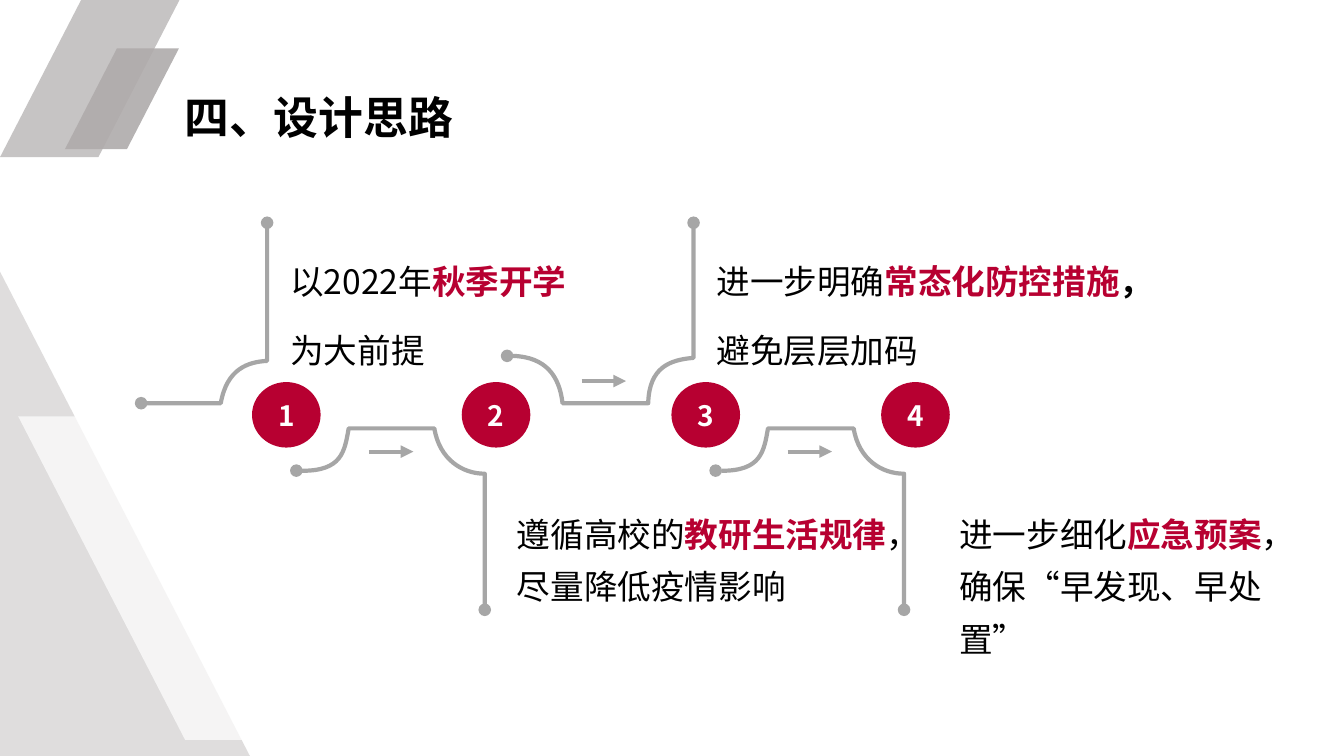
from dataclasses import dataclass

import lxml.etree
import pptx
import pptx.dml.color
import pptx.enum.lang
import pptx.enum.shapes
import pptx.enum.text
import pptx.oxml.ns
import pptx.util

Pt = pptx.util.Pt
qn = pptx.oxml.ns.qn
SHAPE = pptx.enum.shapes.MSO_SHAPE


@dataclass(frozen=True)
class Theme:
    font: str = "Noto Sans CJK SC"
    black: str = "000000"
    white: str = "FFFFFF"
    crimson: str = "B70031"
    track: str = "A6A6A6"
    stone: str = "AFABAB"
    title_size: int = 32
    body_size: int = 24
    number_size: int = 20
    line_spacing: float = 1.3
    track_width: int = 3


theme = Theme()
rgb = pptx.dml.color.RGBColor.from_string


def add_run(paragraph, text, size, color, bold):
    run = paragraph.add_run()
    run.text = text
    run.font.size = Pt(size)
    run.font.bold = bold
    run.font.color.rgb = rgb(color)
    run.font.name = theme.font
    run.font.language_id = pptx.enum.lang.MSO_LANGUAGE_ID.SIMPLIFIED_CHINESE
    east_asian = lxml.etree.SubElement(run.font._element, qn("a:ea"))
    east_asian.set("typeface", theme.font)


def style_track(track, **ends):
    track.line.color.rgb = rgb(theme.track)
    track.line.width = Pt(theme.track_width)
    for end, kind in ends.items():
        lxml.etree.SubElement(track.line._ln, qn("a:" + end)).set("type", kind)


deck = pptx.Presentation()
deck.slide_width, deck.slide_height = Pt(960), Pt(540)
slide = deck.slides.add_slide(deck.slide_layouts[6])
shapes = slide.shapes

# Slanted background bands: box, colour, opacity in percent, mirrored
bands = [
    ((-205.9, 193.7, 384.5, 346.3), theme.stone, 40, True),
    ((0, 0, 128.2, 112.3), theme.stone, 70, False),
    ((46.4, 34.6, 81.4, 72), theme.stone, 90, False),
    ((13, 297.4, 248.4, 231.1), theme.white, 70, True),
]
for box, color, opacity, mirrored in bands:
    band = shapes.add_shape(SHAPE.PARALLELOGRAM, *map(Pt, box))
    band.adjustments[0] = 0.516
    band.shadow.inherit = False
    band.line.fill.background()
    band.fill.solid()
    band.fill.fore_color.rgb = rgb(color)
    tint = band._element.spPr.find(".//" + qn("a:srgbClr"))
    lxml.etree.SubElement(tint, qn("a:alpha")).set("val", str(opacity * 1000))
    if mirrored:
        band._element.spPr.find(qn("a:xfrm")).set("flipH", "1")

# Tracks: a start point, then straight steps (one point) or curves (three points)
lower_track = [
    [(0, 30.2)],
    [(32.4, 31.7), (34.5, 16.6), (37.4, 0)],
    [(98.6, 0)],
    [(102.2, 22.3), (118.8, 32.4), (134.6, 32.4)],
    [(134.6, 129.6)],
]
tracks = [
    ((0, 0), [
        [(100.8, 288)],
        [(157.7, 288)],
        [(162, 263.5), (177.1, 258.5), (190.8, 257.8)],
        [(190.8, 159.1)],
    ]),
    ((211.7, 306), lower_track),
    ((0, 0), [
        [(362.2, 254.2)],
        [(388.8, 253.4), (399.6, 268.6), (401.8, 288)],
        [(463, 288)],
        [(463.7, 262.1), (478.8, 257), (495.4, 255.6)],
        [(495.4, 159.1)],
    ]),
    ((511.2, 306), lower_track),
]
for (left, top), steps in tracks:
    points = [(Pt(left + x), Pt(top + y)) for step in steps for x, y in step]
    builder = shapes.build_freeform(*points[0])
    builder.add_line_segments(points[1:], close=False)
    track = builder.convert_to_shape()
    track.shadow.inherit = False
    track.fill.background()
    style_track(track, headEnd="oval", tailEnd="oval")
    # Turn each three-point step into one Bezier segment
    segments = iter(list(track._element.spPr.find(".//" + qn("a:path"))))
    for step in steps:
        first, *others = [next(segments) for point in step]
        if others:
            first.tag = qn("a:cubicBezTo")
            for other in others:
                first.append(other[0])
                other.getparent().remove(other)

# Direction arrows between the steps
for left, top in [(263.5, 322.6), (415.4, 272.2), (562.6, 322.6)]:
    arrow = shapes.add_connector(
        pptx.enum.shapes.MSO_CONNECTOR.STRAIGHT, Pt(left), Pt(top), Pt(left + 31.7), Pt(top))
    style_track(arrow, tailEnd="triangle")
    lxml.etree.SubElement(arrow._element.spPr, qn("a:effectLst"))

# Numbered circles
for index in range(4):
    circle = shapes.add_shape(
        SHAPE.OVAL, Pt(180 + 149.8 * index), Pt(272.9), Pt(49), Pt(46.8))
    circle.shadow.inherit = False
    circle.line.fill.background()
    circle.fill.solid()
    circle.fill.fore_color.rgb = rgb(theme.crimson)
    frame = circle.text_frame
    frame.margin_left = frame.margin_right = frame.margin_top = frame.margin_bottom = 0
    frame.vertical_anchor = pptx.enum.text.MSO_ANCHOR.MIDDLE
    frame.paragraphs[0].alignment = pptx.enum.text.PP_ALIGN.CENTER
    add_run(frame.paragraphs[0], str(index + 1), theme.number_size, theme.white, True)

# Title and step texts: box, size, paragraphs of (text, colour, bold) runs
black, crimson = theme.black, theme.crimson
texts = [
    ((124.6, 49, 676.8, 57.6), theme.title_size, [
        [("四、设计思路", black, True)],
    ]),
    ((200.2, 174.2, 272.9, 91.4), theme.body_size, [
        [("以2022年", black, False), ("秋季开学", crimson, True)],
        [("为大前提", black, False)],
    ]),
    ((504.7, 174.2, 416.9, 91.4), theme.body_size, [
        [("进一步明确", black, False), ("常态化防控措施", crimson, True), ("，", black, True)],
        [("避免层层加码", black, False)],
    ]),
    ((362.2, 355, 283.7, 79.2), theme.body_size, [
        [("遵循高校的", black, False), ("教研生活规律", crimson, True),
         ("，尽量降低疫情影响", black, False)],
    ]),
    ((678.2, 355, 263.5, 79.2), theme.body_size, [
        [("进一步细化", black, False), ("应急预案", crimson, True),
         ("，确保“早发现、早处置”", black, False)],
    ]),
]
for box, size, paragraphs in texts:
    frame = shapes.add_textbox(*map(Pt, box)).text_frame
    frame.word_wrap = True
    for index, runs in enumerate(paragraphs):
        paragraph = frame.add_paragraph() if index else frame.paragraphs[0]
        paragraph.line_spacing = theme.line_spacing
        if index:
            paragraph.space_before = Pt(12)
        for text, color, bold in runs:
            add_run(paragraph, text, size, color, bold)

deck.save("out.pptx")
